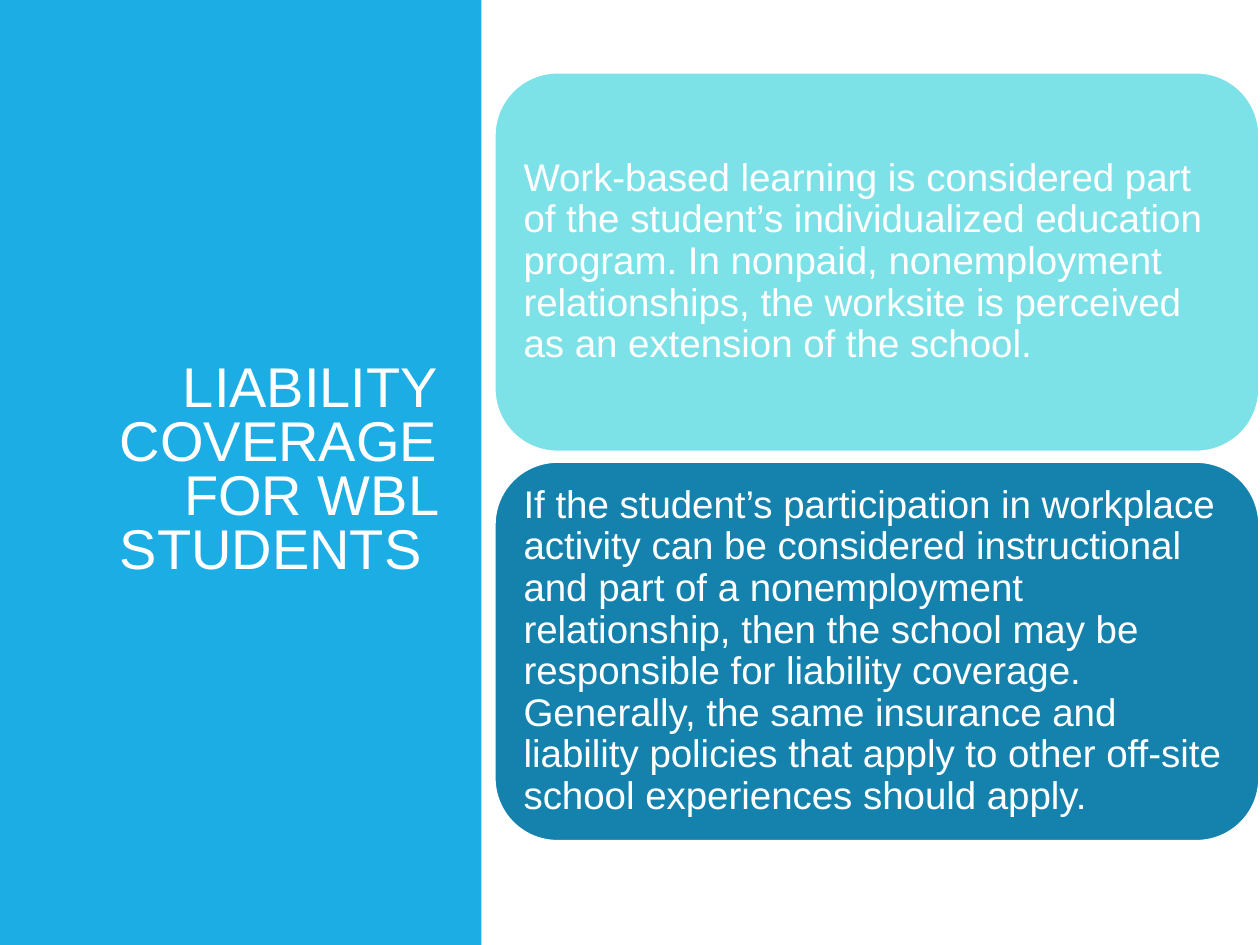
from dataclasses import dataclass

from pptx import Presentation
from pptx import util as u
from pptx.dml.color import RGBColor
from pptx.enum import shapes, text

COLUMNS, ROWS = 100, 75
CELL = u.Inches(0.1)
WHITE = "FFFFFF"


@dataclass(frozen=True)
class Area:
    """A rectangle in columns and rows of the slide grid."""
    column: float
    row: float
    width: float
    height: float

    def inset(self, margin: float) -> "Area":
        return Area(self.column + margin, self.row + margin,
                    self.width - 2 * margin, self.height - 2 * margin)

    def lengths(self) -> list[int]:
        return [round(n * CELL) for n in (self.column, self.row, self.width, self.height)]


@dataclass(frozen=True)
class Card:
    fill: str
    wording: str


SIDEBAR = Area(0, 0, 38.2, ROWS)
TITLE = Area(7.9, 8.8, 27.8, 57.4)
FIRST_CARD = Area(39.2, 5.7, 60.8, 30.2)
CARD_STEP = 30.9
CARD_MARGIN = 1.45

TITLE_FORMAT = {"alignment": text.PP_ALIGN.RIGHT, "line_spacing": 0.8}
CARD_FORMAT = {"alignment": text.PP_ALIGN.LEFT, "line_spacing": 0.9,
               "space_after": u.Pt(7.7)}

CARDS = [
    Card("7DE2E7", "Work-based learning is considered part of the student’s "
         "individualized education program. In nonpaid, nonemployment relationships, "
         "the worksite is perceived as an extension of the school."),
    Card("1482AC", "If the student’s participation in workplace activity can be "
         "considered instructional and part of a nonemployment relationship, then the "
         "school may be responsible for liability coverage. Generally, the same "
         "insurance and liability policies that apply to other off-site school "
         "experiences should apply."),
]


def colour(value: str) -> RGBColor:
    return RGBColor.from_string(value)


def apply(target: object, values: dict) -> None:
    for name, value in values.items():
        setattr(target, name, value)


def add_panel(page, kind, area: Area, fill: str, outline: str | None = None) -> None:
    panel = page.shapes.add_shape(kind, *area.lengths())
    panel.shadow.inherit = False
    panel.fill.solid()
    panel.fill.fore_color.rgb = colour(fill)
    if outline:
        panel.line.color.rgb = colour(outline)
        panel.line.width = u.Pt(2)
    else:
        panel.line.fill.background()


def add_text(page, area: Area, wording: str, size: int, para_format: dict,
             side: float, end: float) -> None:
    """Add middle-anchored white text; side and end are its insets in inches."""
    frame = page.shapes.add_textbox(*area.lengths()).text_frame
    apply(frame, {
        "word_wrap": True, "vertical_anchor": text.MSO_ANCHOR.MIDDLE,
        "margin_left": u.Inches(side), "margin_right": u.Inches(side),
        "margin_top": u.Inches(end), "margin_bottom": u.Inches(end),
    })
    para = frame.paragraphs[0]
    apply(para, para_format)
    span = para.add_run()
    span.text = wording
    apply(span.font, {"name": "Arial", "size": u.Pt(size)})
    span.font.color.rgb = colour(WHITE)


def main() -> None:
    deck = Presentation()
    apply(deck, {"slide_width": COLUMNS * CELL, "slide_height": ROWS * CELL})
    page = deck.slides.add_slide(deck.slide_layouts[6])

    add_panel(page, shapes.MSO_SHAPE.RECTANGLE, SIDEBAR, "1CADE4")
    add_text(page, TITLE, "LIABILITY COVERAGE FOR WBL STUDENTS ", 32,
             TITLE_FORMAT, side=0.1, end=0.05)

    for index, card in enumerate(CARDS):
        area = Area(FIRST_CARD.column, FIRST_CARD.row + index * CARD_STEP,
                    FIRST_CARD.width, FIRST_CARD.height)
        add_panel(page, shapes.MSO_SHAPE.ROUNDED_RECTANGLE, area, card.fill, WHITE)
        add_text(page, area.inset(CARD_MARGIN), card.wording, 22,
                 CARD_FORMAT, side=0.09, end=0.09)

    deck.save("out.pptx")


if __name__ == "__main__":
    main()
